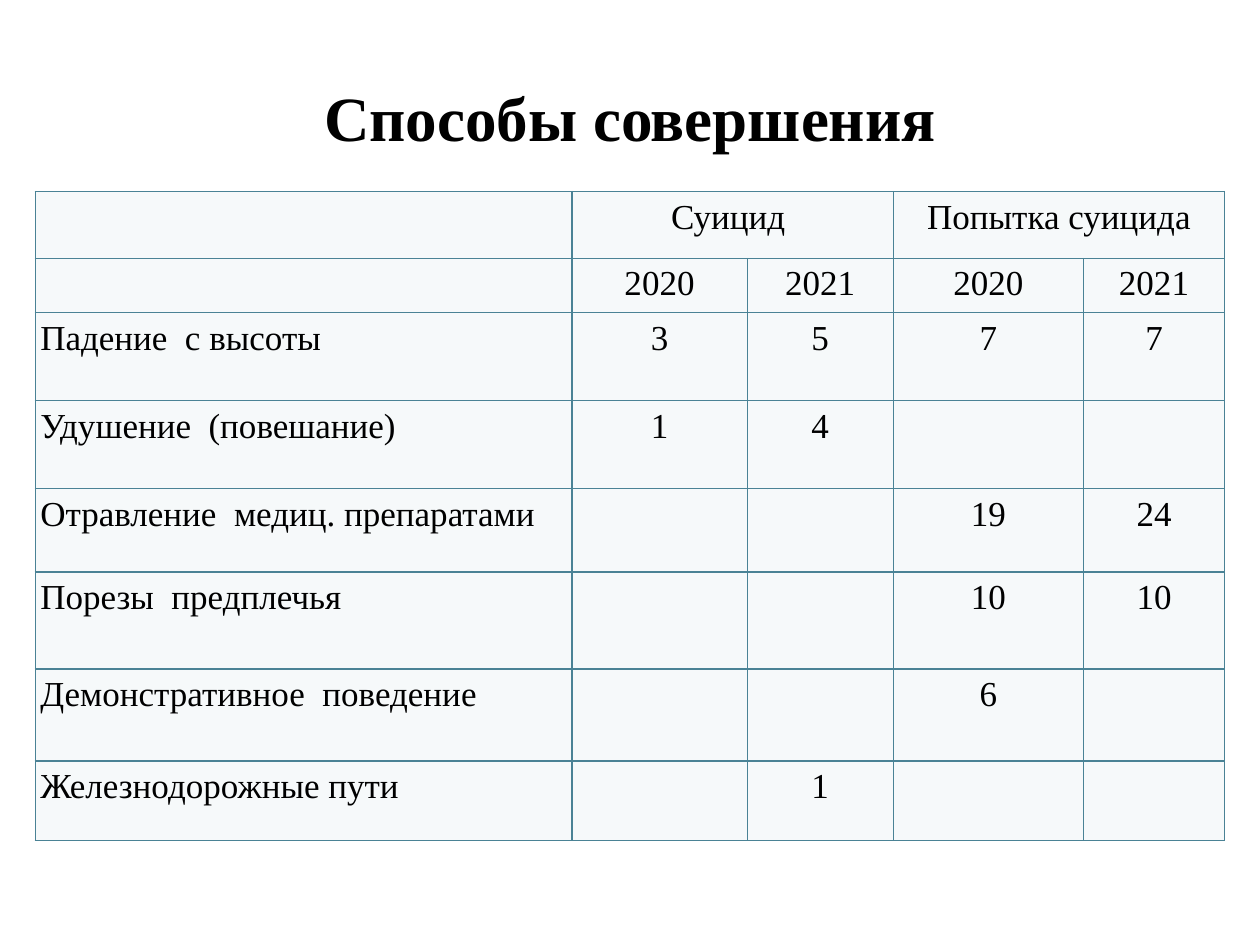
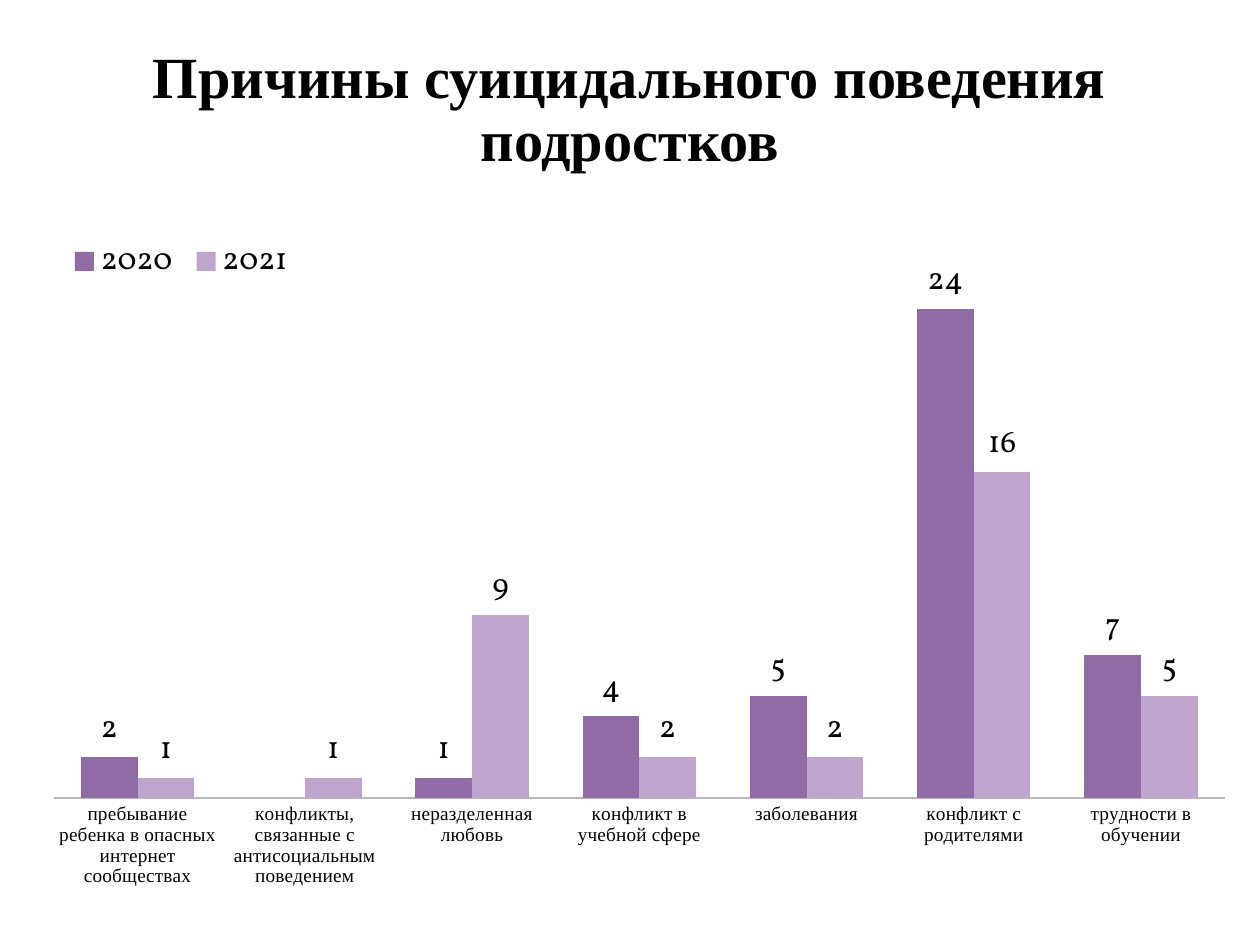
from dataclasses import dataclass

import pptx
import pptx.chart.data
import pptx.dml.color
import pptx.enum.chart
import pptx.enum.text
import pptx.oxml
import pptx.oxml.ns
import pptx.util
from pptx.util import Inches

RGBColor = pptx.dml.color.RGBColor
Pt = pptx.util.Pt
qn = pptx.oxml.ns.qn
CENTER = pptx.enum.text.PP_ALIGN.CENTER
LEFT = pptx.enum.text.PP_ALIGN.LEFT

BLACK = RGBColor(0x00, 0x00, 0x00)
CELL_FILL = RGBColor(0xF6, 0xF9, 0xFA)
CELL_BORDER = RGBColor(0x4A, 0x82, 0x95)
AXIS_GREY = RGBColor(0xB9, 0xB9, 0xB9)
PURPLE = RGBColor(0x91, 0x6B, 0xA6)
LILAC = RGBColor(0xBD, 0xA5, 0xCD)

SERIF = "Times New Roman"
DIGITS = "Vollkorn"
TITLE_ONLY = 5


@dataclass(frozen=True)
class Box:
    left: float
    top: float
    width: float
    height: float

    def inches(self) -> tuple:
        return tuple(Inches(v) for v in (self.left, self.top, self.width, self.height))


@dataclass(frozen=True)
class Title:
    text: str
    box: Box
    size: float
    spacing: float = 1.0


@dataclass(frozen=True)
class YearSeries:
    year: str
    values: tuple
    color: RGBColor


METHODS_TITLE = Title("Способы совершения", Box(0.5, 0.3, 9, 1.25), 36)
CAUSES_TITLE = Title("Причины суицидального поведения подростков",
                     Box(0.12, 0.3, 9.76, 1.16), 33.3, 0.9)

METHODS_BOX = Box(0.28, 1.52, 9.45, 5.15)
COLUMN_WIDTHS = (4.26, 1.39, 1.16, 1.51, 1.12)
ROW_HEIGHTS = (0.53, 0.43, 0.7, 0.7, 0.66, 0.77, 0.73, 0.63)
METHODS = (
    ("", "Суицид ", "", "Попытка суицида", ""),
    ("", "2020", "2021", "2020", "2021"),
    ("Падение  с высоты", "3", "5", "7", "7"),
    ("Удушение  (повешание)", "1", "4", "", ""),
    ("Отравление  медиц. препаратами", "", "", "19", "24"),
    ("Порезы  предплечья", "", "", "10", "10"),
    ("Демонстративное  поведение", "", "", "6", ""),
    ("Железнодорожные пути", "", "1", "", ""),
)

CAUSES_BOX = Box(0.2, 1.47, 9.53, 5.75)
CAUSES = (
    "пребывание ребенка в опасных интернет сообществах",
    "конфликты, связанные с антисоциальным поведением",
    "неразделенная любовь",
    "конфликт в учебной сфере",
    "заболевания",
    "конфликт с родителями",
    "трудности в обучении",
)
YEARS = (
    YearSeries("2020", (2, None, 1, 4, 5, 24, 7), PURPLE),
    YearSeries("2021", (1, 1, 9, 2, 2, 16, 5), LILAC),
)
# Shares of the chart's width and height
PLOT_AREA = Box(0.024, 0.002, 0.975, 0.844)
LEGEND_AREA = Box(0.03, 0.07, 0.2, 0.07)


def set_font(font, *, size: float, name: str = SERIF, bold: bool = False,
             color: RGBColor = BLACK) -> None:
    font.size = Pt(size)
    font.name = name
    font.bold = bold
    font.color.rgb = color


def write_text(tf, text: str, *, align=CENTER, spacing: float = 1.0, **font) -> None:
    p = tf.paragraphs[0]
    p.alignment = align
    p.line_spacing = spacing
    r = p.add_run()
    r.text = text
    set_font(r.font, **font)


def add_titled_slide(prs, title: Title):
    s = prs.slides.add_slide(prs.slide_layouts[TITLE_ONLY])
    sp = s.shapes.title
    sp.left, sp.top, sp.width, sp.height = title.box.inches()
    tf = sp.text_frame
    tf.auto_size = pptx.enum.text.MSO_AUTO_SIZE.NONE
    tf.word_wrap = True
    tf.vertical_anchor = pptx.enum.text.MSO_ANCHOR.MIDDLE
    write_text(tf, title.text, size=title.size, spacing=title.spacing, bold=True)
    return s


def add_borders(cell) -> None:
    tc_pr = cell._tc.get_or_add_tcPr()
    for side in ("lnL", "lnR", "lnT", "lnB"):
        tc_pr.append(pptx.oxml.parse_xml(
            f'<a:{side} {pptx.oxml.ns.nsdecls("a")} w="{Pt(0.75)}">'
            f'<a:solidFill><a:srgbClr val="{CELL_BORDER}"/></a:solidFill></a:{side}>'))


def add_methods_table(s) -> None:
    table = s.shapes.add_table(len(METHODS), len(COLUMN_WIDTHS), *METHODS_BOX.inches()).table
    table.first_row = table.horz_banding = False
    for column, width in zip(table.columns, COLUMN_WIDTHS):
        column.width = Inches(width)
    for row, height in zip(table.rows, ROW_HEIGHTS):
        row.height = Inches(height)
    for i, texts in enumerate(METHODS):
        for j, text in enumerate(texts):
            cell = table.cell(i, j)
            add_borders(cell)
            cell.fill.solid()
            cell.fill.fore_color.rgb = CELL_FILL
            cell.margin_left = cell.margin_right = Inches(0.04)
            if text:
                write_text(cell.text_frame, text, size=20, align=CENTER if j else LEFT)
    for first in (1, 3):
        table.cell(0, first).merge(table.cell(0, first + 1))


def make_layout(area: Box, inner: bool = False):
    """Manual chart layout that places a part at shares of the chart."""
    target = '<c:layoutTarget val="inner"/>' if inner else ""
    return pptx.oxml.parse_xml(
        f'<c:layout {pptx.oxml.ns.nsdecls("c")}><c:manualLayout>{target}'
        '<c:xMode val="edge"/><c:yMode val="edge"/>'
        f'<c:x val="{area.left}"/><c:y val="{area.top}"/>'
        f'<c:w val="{area.width}"/><c:h val="{area.height}"/>'
        '</c:manualLayout></c:layout>')


def place_part(part, area: Box, index: int, inner: bool = False) -> None:
    for old in part.findall(qn("c:layout")):
        part.remove(old)
    part.insert(index, make_layout(area, inner))


def add_causes_chart(s) -> None:
    data = pptx.chart.data.CategoryChartData()
    data.categories = CAUSES
    for year in YEARS:
        data.add_series(year.year, year.values)
    chart = s.shapes.add_chart(pptx.enum.chart.XL_CHART_TYPE.COLUMN_CLUSTERED,
                               *CAUSES_BOX.inches(), data).chart
    chart.has_title = False
    set_font(chart.font, size=10, name="Arial")

    plot = chart.plots[0]
    plot.gap_width = 95
    plot.overlap = 0
    plot.vary_by_categories = False
    for series, year in zip(plot.series, YEARS):
        series.format.fill.solid()
        series.format.fill.fore_color.rgb = year.color
        labels = series.data_labels
        labels.show_value = True
        labels.position = pptx.enum.chart.XL_LABEL_POSITION.OUTSIDE_END
        set_font(labels.font, size=18, name=DIGITS)

    axis = chart.category_axis
    axis.major_tick_mark = pptx.enum.chart.XL_TICK_MARK.NONE
    axis.format.line.color.rgb = AXIS_GREY
    axis.format.line.width = Pt(0.75)
    set_font(axis.tick_labels.font, size=11)
    value_axis = chart.value_axis
    value_axis.minimum_scale, value_axis.maximum_scale = 0, 30
    value_axis.has_major_gridlines = False
    value_axis.visible = False

    chart.has_legend = True
    legend = chart.legend
    legend.position = pptx.enum.chart.XL_LEGEND_POSITION.RIGHT
    legend.include_in_layout = True
    set_font(legend.font, size=18, name=DIGITS)
    place_part(legend._element, LEGEND_AREA, 1)
    place_part(chart._chartSpace.chart.plotArea, PLOT_AREA, 0, inner=True)


def main() -> None:
    prs = pptx.Presentation()
    prs.slide_width, prs.slide_height = Inches(10), Inches(7.5)
    add_methods_table(add_titled_slide(prs, METHODS_TITLE))
    add_causes_chart(add_titled_slide(prs, CAUSES_TITLE))
    prs.save("out.pptx")


if __name__ == "__main__":
    main()
